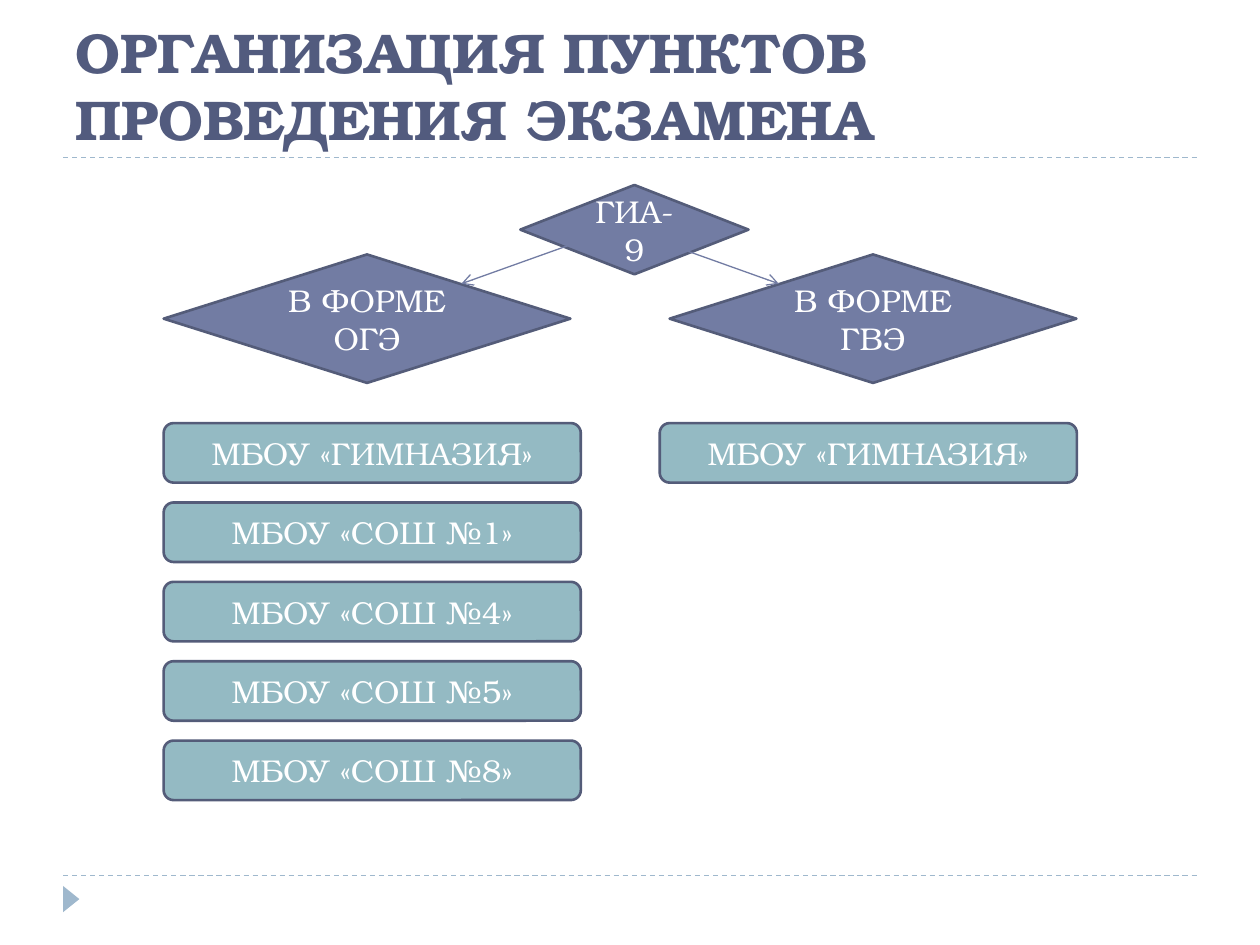
"""Build the slide on how the exam sites are organised."""
import pptx
import pptx.dml.color
import pptx.enum.dml
import pptx.enum.shapes
import pptx.enum.text
import pptx.oxml
import pptx.oxml.ns
import pptx.util

Cm, Pt = pptx.util.Cm, pptx.util.Pt
RGBColor = pptx.dml.color.RGBColor
SHAPE = pptx.enum.shapes.MSO_SHAPE
ANCHOR = pptx.enum.text.MSO_ANCHOR
ALIGN = pptx.enum.text.PP_ALIGN

WHITE = RGBColor(0xFF, 0xFF, 0xFF)
TITLE = RGBColor(0x52, 0x5B, 0x7E)
VIOLET = RGBColor(0x72, 0x7C, 0xA3)
OUTLINE = RGBColor(0x54, 0x5C, 0x79)
TEAL = RGBColor(0x94, 0xBA, 0xC3)
PALE_BLUE = RGBColor(0x9F, 0xB8, 0xCD)

TITLE_FONT = {"name": "TeX Gyre Bonum", "size": Pt(32), "bold": True}
LABEL_FONT = {"name": "TeX Gyre Bonum", "size": Pt(18)}

prs = pptx.Presentation()
prs.slide_width, prs.slide_height = Cm(25.4), Cm(19.05)
s = prs.slides.add_slide(prs.slide_layouts[6])


def write(sp, text, font, color, align, anchor):
    tf = sp.text_frame
    tf.word_wrap = True
    tf.vertical_anchor = anchor
    p = tf.paragraphs[0]
    p.alignment = align
    r = p.add_run()
    r.text = text
    for key, value in font.items():
        setattr(r.font, key, value)
    r.font.color.rgb = color


def add_line(x1, y1, x2, y2, color):
    sp = s.shapes.add_connector(
        pptx.enum.shapes.MSO_CONNECTOR.STRAIGHT, Cm(x1), Cm(y1), Cm(x2), Cm(y2))
    sp.line.color.rgb = color
    sp.line.width = Pt(0.75)
    pptx.oxml.ns.qn("a:effectLst")
    sp.element.spPr.append(pptx.oxml.parse_xml(
        f'<a:effectLst {pptx.oxml.ns.nsdecls("a")}/>'))
    return sp


for y in (17.65, 3.18):
    sp = add_line(1.27, y, 24.13, y, PALE_BLUE)
    sp.line.dash_style = pptx.enum.dml.MSO_LINE.DASH

sp = s.shapes.add_shape(SHAPE.ISOSCELES_TRIANGLE, Cm(1.17), Cm(17.96), Cm(0.53), Cm(0.33))
sp.rotation = 90
sp.shadow.inherit = False
sp.fill.solid()
sp.fill.fore_color.rgb = PALE_BLUE
sp.line.fill.background()

sp = s.shapes.add_textbox(Cm(1.27), Cm(0.18), Cm(23.83), Cm(3))
write(sp, "ОРГАНИЗАЦИЯ ПУНКТОВ ПРОВЕДЕНИЯ ЭКЗАМЕНА", TITLE_FONT, TITLE,
      ALIGN.LEFT, ANCHOR.BOTTOM)

nodes = [
    (SHAPE.FLOWCHART_DECISION, VIOLET, "ГИА-9", 10.49, 3.73, 4.6, 1.8),
    (SHAPE.FLOWCHART_DECISION, VIOLET, "В ФОРМЕ ОГЭ", 3.3, 5.13, 8.2, 2.59),
    (SHAPE.FLOWCHART_DECISION, VIOLET, "В ФОРМЕ ГВЭ", 13.5, 5.13, 8.2, 2.59),
]
sites = [
    (3.3, ["ГИМНАЗИЯ", "СОШ №1", "СОШ №4", "СОШ №5", "СОШ №8"]),
    (13.3, ["ГИМНАЗИЯ"]),
]
for left, schools in sites:
    for i, school in enumerate(schools):
        nodes.append((SHAPE.ROUNDED_RECTANGLE, TEAL, f"МБОУ «{school}»",
                      left, 8.53 + 1.6 * i, 8.41, 1.2))

for kind, fill, text, left, top, width, height in nodes:
    sp = s.shapes.add_shape(kind, Cm(left), Cm(top), Cm(width), Cm(height))
    sp.shadow.inherit = False
    sp.fill.solid()
    sp.fill.fore_color.rgb = fill
    sp.line.color.rgb = OUTLINE
    sp.line.width = Pt(1.5)
    write(sp, text, LABEL_FONT, WHITE, ALIGN.CENTER, ANCHOR.MIDDLE)

for x1, x2 in ((11.51, 9.3), (13.49, 15.7)):
    sp = add_line(x1, 4.93, x2, 5.72, VIOLET)
    sp.line._get_or_add_ln().append(pptx.oxml.parse_xml(
        f'<a:tailEnd {pptx.oxml.ns.nsdecls("a")} type="arrow"/>'))

prs.save("out.pptx")
